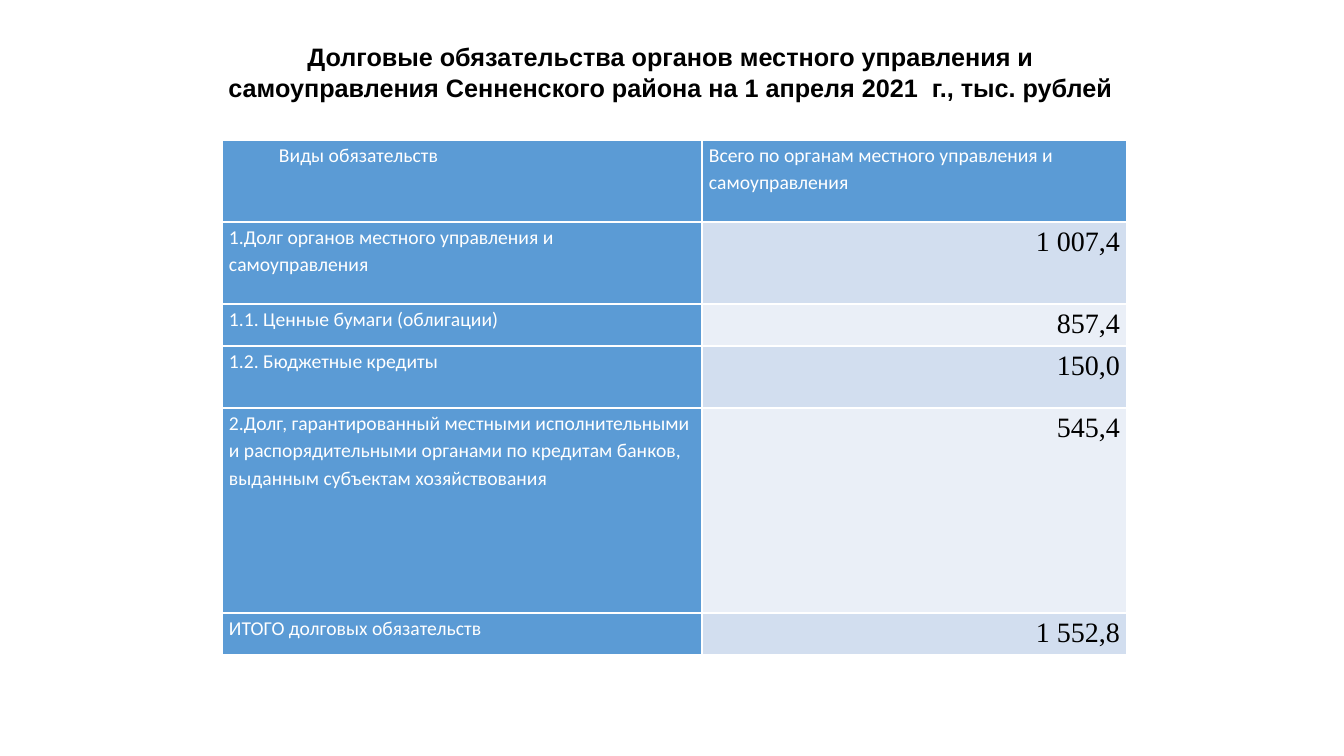
from lxml import etree
from pptx import Presentation
from pptx.dml.color import RGBColor
from pptx.enum.text import MSO_ANCHOR, PP_ALIGN
from pptx.oxml.ns import qn
from pptx.util import Pt

LEFT, CENTER, RIGHT = PP_ALIGN.LEFT, PP_ALIGN.CENTER, PP_ALIGN.RIGHT
TOP, MIDDLE = MSO_ANCHOR.TOP, MSO_ANCHOR.MIDDLE

TITLE = ("Долговые обязательства органов местного управления и "
         "самоуправления Сенненского района на 1 апреля 2021  г., тыс. рублей")
ROWS = [
    ("Виды обязательств", "Всего по органам местного управления и самоуправления"),
    ("1.Долг органов местного управления и самоуправления", "1 007,4"),
    ("1.1. Ценные бумаги (облигации)", "857,4"),
    ("1.2. Бюджетные кредиты", "150,0"),
    ("2.Долг, гарантированный местными исполнительными и распорядительными "
     "органами по кредитам банков, выданным субъектам хозяйствования", "545,4"),
    ("ИТОГО долговых обязательств", "1 552,8"),
]
COLORS = {"head": "5B9BD5", "odd": "D2DEEF", "even": "EAEFF7",
          "white": "FFFFFF", "black": "000000"}

SLIDE = (1344, 756)
TITLE_BOX = (214, 36, 913, 72)
TABLE_AT = (222, 140)
COL_WIDTHS = (480, 425)
ROW_HEIGHTS = (82, 82, 42, 62, 205, 42)
CELL_MARGIN = 7
HEAD_INDENT = 50


def px(n):
    return round(n * 914400 / 100.8)


def set_font(p, name, size, color, bold=False):
    p.font.name = name
    p.font.size = Pt(size)
    p.font.bold = bold
    p.font.color.rgb = RGBColor.from_string(COLORS[color])


def add_borders(cell):
    tcPr = cell._tc.get_or_add_tcPr()
    for side in ("lnL", "lnR", "lnT", "lnB"):
        ln = etree.SubElement(tcPr, qn(f"a:{side}"), w=str(Pt(1)))
        fill = etree.SubElement(ln, qn("a:solidFill"))
        etree.SubElement(fill, qn("a:srgbClr"), val=COLORS["white"])


def fill_cell(cell, text, row, col):
    is_value = row > 0 and col > 0
    band = "odd" if row % 2 else "even"
    add_borders(cell)
    cell.fill.solid()
    cell.fill.fore_color.rgb = RGBColor.from_string(COLORS[band if is_value else "head"])
    cell.margin_left = cell.margin_right = px(CELL_MARGIN)
    cell.margin_top = cell.margin_bottom = 0
    cell.vertical_anchor = TOP
    p = cell.text_frame.paragraphs[0]
    p.text = text
    p.line_spacing = 1.15
    if is_value:
        p.alignment = RIGHT
        set_font(p, "Times New Roman", 20, "black")
    else:
        p.alignment = LEFT
        set_font(p, "Calibri", 14, "white")


prs = Presentation()
prs.slide_width, prs.slide_height = map(px, SLIDE)
slide = prs.slides.add_slide(prs.slide_layouts[5])

title = slide.shapes.title
title.left, title.top, title.width, title.height = map(px, TITLE_BOX)
tf = title.text_frame
tf.word_wrap = True
tf.vertical_anchor = MIDDLE
p = tf.paragraphs[0]
p.text = TITLE
p.alignment = CENTER
set_font(p, "Arial", 18, "black", bold=True)

table = slide.shapes.add_table(
    len(ROWS), len(COL_WIDTHS), *map(px, TABLE_AT),
    px(sum(COL_WIDTHS)), px(sum(ROW_HEIGHTS))).table
for column, width in zip(table.columns, COL_WIDTHS):
    column.width = px(width)
for r, (texts, height) in enumerate(zip(ROWS, ROW_HEIGHTS)):
    table.rows[r].height = px(height)
    for c, text in enumerate(texts):
        fill_cell(table.cell(r, c), text, r, c)
head = table.cell(0, 0).text_frame.paragraphs[0]
head._p.get_or_add_pPr().set("marL", str(px(HEAD_INDENT)))

prs.save("out.pptx")
